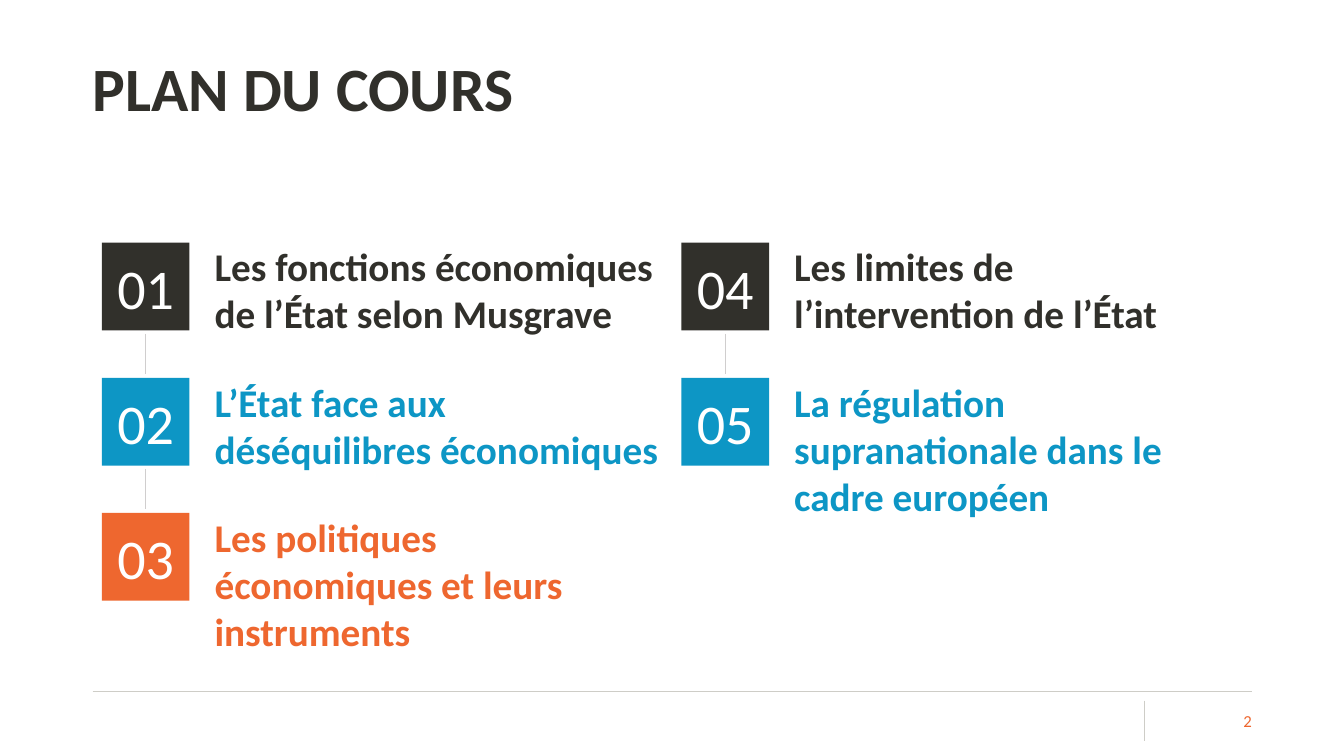
from lxml.etree import SubElement
from pptx import Presentation
from pptx.dml.color import RGBColor as Rgb
from pptx.enum.shapes import MSO_CONNECTOR as Conn, MSO_SHAPE as Kind
from pptx.enum.text import MSO_ANCHOR as Anchor, MSO_AUTO_SIZE as Fit, PP_ALIGN as Align
from pptx.oxml.ns import qn
from pptx.util import Pt

HEX = {"dark": "31302B", "blue": "0D96C5", "orange": "EE672F",
       "white": "FFFFFF", "link": "D0CECE", "rule": "CECDC7"}
HUES = ["dark", "blue", "orange"]
PLAN = [
    ["Les fonctions économiques de l’État selon Musgrave",
     "L’État face aux déséquilibres économiques",
     "Les politiques économiques et leurs instruments"],
    ["Les limites de l’intervention de l’État",
     "La régulation supranationale dans le cadre européen"],
]
SIDE = 62.7    # number square
STEP = 96.5    # distance between rows
LINE = 33.6    # height of one text line


def color(name):
    return Rgb.from_string(HEX[name])


def write(shape, text, size, hue, bold=False, align=Align.LEFT, **frame):
    """Fill the shape with one paragraph; frame holds text frame values."""
    body = shape.text_frame
    for key, value in {"word_wrap": True, **frame}.items():
        setattr(body, key, value)
    body.text = text
    par = body.paragraphs[0]
    par.alignment = align
    for key, value in {"name": "Calibri", "size": Pt(size), "bold": bold}.items():
        setattr(par.font, key, value)
    par.font.color.rgb = color(hue)
    return par


def rule(slide, x1, y1, x2, y2, hue):
    line = slide.shapes.add_connector(Conn.STRAIGHT, Pt(x1), Pt(y1), Pt(x2), Pt(y2))
    line.line.color.rgb = color(hue)
    line.line.width = Pt(0.5)
    SubElement(line._element.spPr, qn("a:effectLst"))


def head(slide, left, top, width, height):
    title = slide.shapes.title
    box = {"left": left, "top": top, "width": width, "height": height}
    for key, value in box.items():
        setattr(title, key, Pt(value))
    par = write(title, "PLAN DU COURS", 44, "dark", True, auto_size=Fit.NONE,
                vertical_anchor=Anchor.MIDDLE, margin_left=0)
    par.line_spacing = 0.9


def item(slide, left, top, width, number, text, hue):
    # Text beside the square
    lines = 3 if len(text) > 46 and hue != "dark" else 2
    label = slide.shapes.add_textbox(Pt(left + 73.5), Pt(top), Pt(width - 73.5), Pt(lines * LINE))
    write(label, text, 28, hue, True, auto_size=Fit.SHAPE_TO_FIT_TEXT,
          margin_top=0, margin_bottom=0)
    # Number square
    tile = slide.shapes.add_shape(Kind.RECTANGLE, Pt(left), Pt(top), Pt(SIDE), Pt(SIDE))
    tile.shadow.inherit = False
    tile.fill.solid()
    tile.fill.fore_color.rgb = color(hue)
    tile.line.fill.background()
    write(tile, f"{number:02}", 40, "white", align=Align.CENTER,
          vertical_anchor=Anchor.MIDDLE)


def column(slide, left, top, width, first, texts):
    for row, text in enumerate(texts):
        y = top + row * STEP
        item(slide, left, y, width, first + row, text, HUES[row])
        # Link up to the square above
        if row:
            mid = left + SIDE / 2
            rule(slide, mid, y - 31.5, mid, y - 2.5, "link")


def foot(slide, left, top, width):
    right = left + width
    rule(slide, left, top, right, top, "rule")
    rule(slide, right - 77, top + 6.5, right - 77, top + 35.3, "rule")
    page = slide.shapes.add_textbox(Pt(right - 68.4), Pt(top + 6.5), Pt(68.4), Pt(28.8))
    write(page, "2", 12, "orange", align=Align.RIGHT, vertical_anchor=Anchor.MIDDLE,
          margin_left=0, margin_right=0)


def main():
    deck = Presentation()
    deck.slide_width, deck.slide_height = Pt(960), Pt(540)
    slide = deck.slides.add_slide(deck.slide_layouts.get_by_name("Title Only"))
    head(slide, 66.2, 13, 753.8, 104.4)
    first = 1
    for col, texts in enumerate(PLAN):
        column(slide, 72.7 + col * 414, 173.4, 405.5, first, texts)
        first += len(texts)
    foot(slide, 66.2, 493.9, 828)
    deck.save("out.pptx")


if __name__ == "__main__":
    main()
